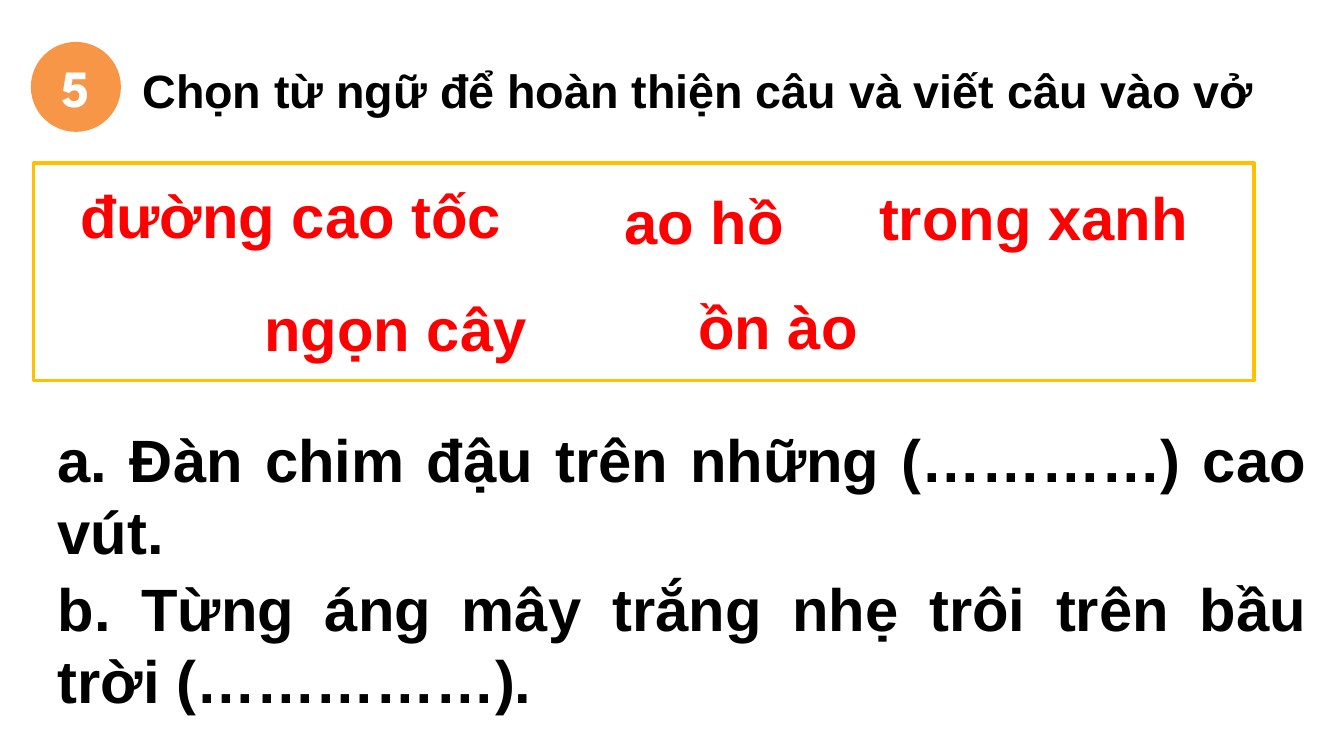
"""Build a Vietnamese fill-in-the-blank exercise slide with a word bank."""
from lxml import etree
from pptx import Presentation
from pptx.dml.color import RGBColor
from pptx.enum.shapes import MSO_SHAPE
from pptx.enum.text import MSO_ANCHOR, MSO_AUTO_SIZE, PP_ALIGN
from pptx.oxml.ns import qn
from pptx.util import Inches, Pt

RECTANGLE, OVAL = MSO_SHAPE.RECTANGLE, MSO_SHAPE.OVAL
TOP, MIDDLE = MSO_ANCHOR.TOP, MSO_ANCHOR.MIDDLE
CENTER, JUSTIFY = PP_ALIGN.CENTER, PP_ALIGN.JUSTIFY
FIXED = MSO_AUTO_SIZE.NONE
WIDTH = Inches(10)
HEIGHT = WIDTH * 9 // 16
COLUMN, ROW = WIDTH / 100, HEIGHT / 100


def color(target, hex_string):
    """Apply a hex colour to a fill or a font."""
    if hasattr(target, "solid"):
        target.solid()
        target.fore_color.rgb = RGBColor.from_string(hex_string)
    else:
        target.color.rgb = RGBColor.from_string(hex_string)


def write(box, lines, size, ink, align, anchor=TOP, font="Arial"):
    """Fill a box with bold paragraphs of one format."""
    frame = box.text_frame
    frame_format = {"word_wrap": True, "auto_size": FIXED, "vertical_anchor": anchor}
    for name, value in frame_format.items():
        setattr(frame, name, value)
    frame.text = "\n".join(lines)
    for index, para in enumerate(frame.paragraphs):
        properties = para._p.get_or_add_pPr()
        properties.set("marL", "0")
        properties.set("indent", "0")
        etree.SubElement(properties, qn("a:buNone"))
        para.alignment = align
        para.space_before = Pt(3 if index else 0)
        for name, value in {"name": font, "size": Pt(size), "bold": True}.items():
            setattr(para.font, name, value)
        color(para.font, ink)


deck = Presentation()
deck.slide_width, deck.slide_height = WIDTH, HEIGHT
page = deck.slides.add_slide(deck.slide_layouts[1])
color(page.background.fill, "FFFFFF")

title, body = page.shapes.title, page.placeholders[1]
placeholder_places = [
    (title, 9.6, 7.3, 92.9, 9.3),
    (body, 3.3, 55.1, 95, 41),
]
for box, left, top, width, height in placeholder_places:
    box.left, box.top = int(left * COLUMN), int(top * ROW)
    box.width, box.height = int(width * COLUMN), int(height * ROW)
write(title, ["Chọn từ ngữ để hoàn thiện câu và viết câu vào vở"], 25, "000000", JUSTIFY)
write(body, [
    "a. Đàn chim đậu trên những (…………) cao vút.",
    "b. Từng áng mây trắng nhẹ trôi trên bầu trời (……………).",
], 32, "000000", JUSTIFY)

shape_places = [
    (OVAL, "5", 2.3, 5.55, 6.7, 11.9),
    (RECTANGLE, "", 2.5, 21.55, 90.8, 28.8),
    (RECTANGLE, "đường cao tốc", 4.15, 22.8, 35, 11.4),
    (RECTANGLE, "ồn ào", 46.65, 37.5, 22.5, 11.4),
    (RECTANGLE, "ao hồ", 41.15, 23.5, 22.5, 11.4),
    (RECTANGLE, "trong xanh", 63.8, 23, 26.2, 11.7),
    (RECTANGLE, "ngọn cây", 17.75, 37.75, 23.4, 11.4),
]
for kind, text, left, top, width, height in shape_places:
    box = page.shapes.add_shape(
        kind, int(left * COLUMN), int(top * ROW), int(width * COLUMN), int(height * ROW)
    )
    box.shadow.inherit = False
    if not text:
        box.fill.background()
        color(box.line.fill, "FFC000")
        box.line.width = Pt(2)
        continue
    box.line.fill.background()
    if kind == OVAL:
        color(box.fill, "F79646")
        write(box, [text], 28, "FFFFFF", CENTER, MIDDLE, "League Spartan")
    else:
        color(box.fill, "FFFFFF")
        write(box, [text], 32, "FF0000", CENTER)

deck.save("out.pptx")
